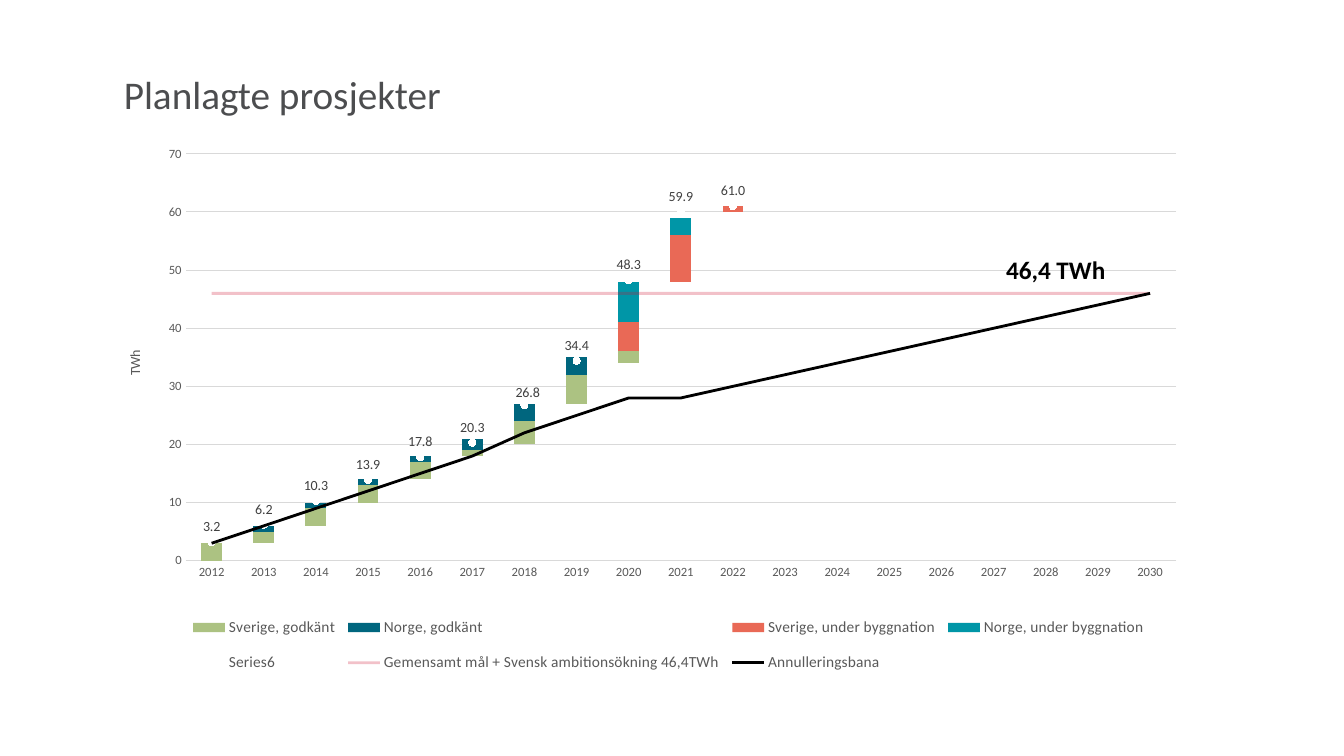
"""Builds the slide of planned projects with a combined bar and line chart."""
from dataclasses import dataclass
from typing import Any, Optional

from pptx import Presentation
from pptx import oxml as ox
from pptx import util as u
from pptx.chart import data as cd
from pptx.dml import color as dc
from pptx.enum import chart as ec
from pptx.enum import text as et
from pptx.oxml import ns

FONT = "Calibri"
GREY, RULE = "595959", "D9D9D9"
YEARS = range(2012, 2031)
GOAL = 46
TOTALS = [3.2, 6.2, 10.3, 13.9, 17.8, 20.3, 26.8, 34.4, 48.3, 59.9, 61]


@dataclass
class Series:
    name: str
    vals: list
    color: Optional[str] = None
    width: float = 0
    alpha: int = 100


@dataclass
class Label:
    text: str
    box: tuple
    size: float
    color: str
    bold: bool = False
    wrap: bool = True


BARS = [
    Series("Series 1", [0] + [round(total) for total in TOTALS[:-1]]),
    Series("Sverige, godkänt", [3, 2, 3, 3, 3, 1, 4, 5, 2, 0, 0], "ACC282"),
    Series("Norge, godkänt", [0, 1, 1, 1, 1, 2, 3, 3, 0], "00667E"),
    Series("Sverige, under byggnation", [0] * 8 + [5, 8, 1], "E96956"),
    Series("Norge, under byggnation", [None] * 7 + [0, 7, 3, 0], "0096A7"),
]
LINES = [
    Series("Series6", TOTALS),
    Series("Gemensamt mål + Svensk ambitionsökning 46,4TWh", [GOAL] * len(YEARS), "CD1232", 2, 25),
    Series("Annulleringsbana", [3, 6, 9, 12, 15, 18, 22, 25, 28, *range(28, GOAL + 1, 2)],
           "000000", 2),
]
LABELS = [
    Label("Planlagte prosjekter", (1.13, 0.65, 11.27, 0.9), 28, "4C4D4F"),
    Label("46,4 TWh", (9.88, 2.47, 1.34, 0.4), 18, "000000", True, False),
]


def rgb(code: str) -> dc.RGBColor:
    return dc.RGBColor.from_string(code)


def apply(item: Any, **style: Any) -> None:
    for key, val in style.items():
        setattr(item, key, val)


def ink(font: Any, size: float, color: str, bold: bool = False) -> None:
    apply(font, name=FONT, size=u.Pt(size), bold=bold)
    font.color.rgb = rgb(color)


def stroke(line: Any, color: str, width: float, alpha: int = 100) -> None:
    line.color.rgb = rgb(color)
    line.width = u.Pt(width)
    if alpha < 100:
        tint = line.fill._xPr.find(".//" + ns.qn("a:srgbClr"))
        tint.append(ox.parse_xml(f'<a:alpha {ns.nsdecls("a")} val="{alpha * 1000}"/>'))


def layout(*spots: float, inner: bool = False) -> Any:
    target = '<c:layoutTarget val="inner"/>' if inner else ""
    modes = '<c:xMode val="edge"/><c:yMode val="edge"/>' if len(spots) == 4 else ""
    sizes = "".join(f'<c:{k} val="{v}"/>' for k, v in zip("xywh", spots))
    return ox.parse_xml(f'<c:layout {ns.nsdecls("c")}><c:manualLayout>{target}{modes}{sizes}'
                        "</c:manualLayout></c:layout>")


def strip(node: Any, tag: str) -> None:
    for child in node.findall(ns.qn(tag)):
        node.remove(child)


def split(chart: Any) -> None:
    bar = chart.plots[0]._element
    group = ox.parse_xml(f'<c:lineChart {ns.nsdecls("c")}><c:grouping val="standard"/>'
                         '<c:varyColors val="0"/></c:lineChart>')
    for ser in bar.findall(ns.qn("c:ser"))[len(BARS):]:
        strip(ser, "c:invertIfNegative")
        group.append(ser)
    group.append(ox.parse_xml(f'<c:marker {ns.nsdecls("c")} val="1"/>'))
    for axis in bar.findall(ns.qn("c:axId")):
        group.append(ox.parse_xml(f'<c:axId {ns.nsdecls("c")} val="{axis.get("val")}"/>'))
    bar.addnext(group)


def tag(ser: Any) -> None:
    tags = ser.data_labels
    apply(tags, show_value=True, number_format="0.0", number_format_is_linked=False,
          position=ec.XL_LABEL_POSITION.ABOVE)
    ink(tags.font, 10, "404040")
    moved = ser.points[YEARS.index(2018)].data_label
    moved.position = ec.XL_LABEL_POSITION.ABOVE
    ink(moved.font, 10, "404040")
    node = tags._element.find(ns.qn("c:dLbl"))
    node.find(ns.qn("c:idx")).addnext(layout(0.003, 0.005))


def paint(chart: Any) -> None:
    bars, lines = chart.plots
    apply(bars, gap_width=150, overlap=100, vary_by_categories=False)
    for ser, item in zip(bars.series, BARS):
        fill = ser.format.fill
        if item.color:
            fill.solid()
            fill.fore_color.rgb = rgb(item.color)
        else:
            fill.background()
    for ser, item in zip(lines.series, LINES):
        ser.smooth = False
        if item.color:
            stroke(ser.format.line, item.color, item.width, item.alpha)
            ser.marker.style = ec.XL_MARKER_STYLE.NONE
            continue
        ser.format.line.fill.background()
        apply(ser.marker, style=ec.XL_MARKER_STYLE.CIRCLE, size=5)
        ser.marker.format.fill.background()
        ser.marker.format.line.fill.background()
        tag(ser)


def axes(chart: Any) -> None:
    cat, val = chart.category_axis, chart.value_axis
    for axis in (cat, val):
        apply(axis, major_tick_mark=ec.XL_TICK_MARK.NONE, minor_tick_mark=ec.XL_TICK_MARK.NONE)
        ink(axis.tick_labels.font, 9, GREY)
    stroke(cat.format.line, RULE, 0.75)
    val.format.line.fill.background()
    apply(val, minimum_scale=0, maximum_scale=70, major_unit=10, has_major_gridlines=True)
    stroke(val.major_gridlines.format.line, RULE, 0.75)
    apply(val.tick_labels, number_format="0", number_format_is_linked=False)
    run = val.axis_title.text_frame.paragraphs[0].add_run()
    run.text = "TWh"
    ink(run.font, 10, GREY)


def key(chart: Any) -> None:
    chart.has_legend = True
    legend = chart.legend
    apply(legend, position=ec.XL_LEGEND_POSITION.BOTTOM, include_in_layout=False)
    ink(legend.font, 11, GREY)
    node = legend._element
    strip(node, "c:layout")
    hide = ox.parse_xml(f'<c:legendEntry {ns.nsdecls("c")}><c:idx val="0"/>'
                        '<c:delete val="1"/></c:legendEntry>')
    node.find(ns.qn("c:legendPos")).addnext(hide)
    hide.addnext(layout(0.067, 0.844, 0.903, 0.151))


def draw(slide: Any) -> None:
    data = cd.CategoryChartData()
    data.categories = [str(year) for year in YEARS]
    for item in BARS + LINES:
        data.add_series(item.name, item.vals)
    box = map(u.Inches, (1.13, 1.15, 10.61, 5.71))
    chart = slide.shapes.add_chart(ec.XL_CHART_TYPE.COLUMN_STACKED, *box, data).chart
    chart.has_title = False
    ink(chart.font, 10, "000000")
    split(chart)
    paint(chart)
    axes(chart)
    key(chart)
    area = chart.plots[0]._element.getparent()
    strip(area, "c:layout")
    area.insert(0, layout(0.067, 0.066, 0.926, 0.707, inner=True))


def write(slide: Any, label: Label) -> None:
    frame = slide.shapes.add_textbox(*map(u.Inches, label.box)).text_frame
    apply(frame, word_wrap=label.wrap, vertical_anchor=et.MSO_ANCHOR.TOP)
    run = frame.paragraphs[0].add_run()
    run.text = label.text
    ink(run.font, label.size, label.color, label.bold)


def main() -> None:
    deck = Presentation()
    apply(deck, slide_width=u.Inches(13.33), slide_height=u.Inches(7.5))
    slide = deck.slides.add_slide(deck.slide_layouts[6])
    draw(slide)
    for label in LABELS:
        write(slide, label)
    deck.save("out.pptx")


if __name__ == "__main__":
    main()
